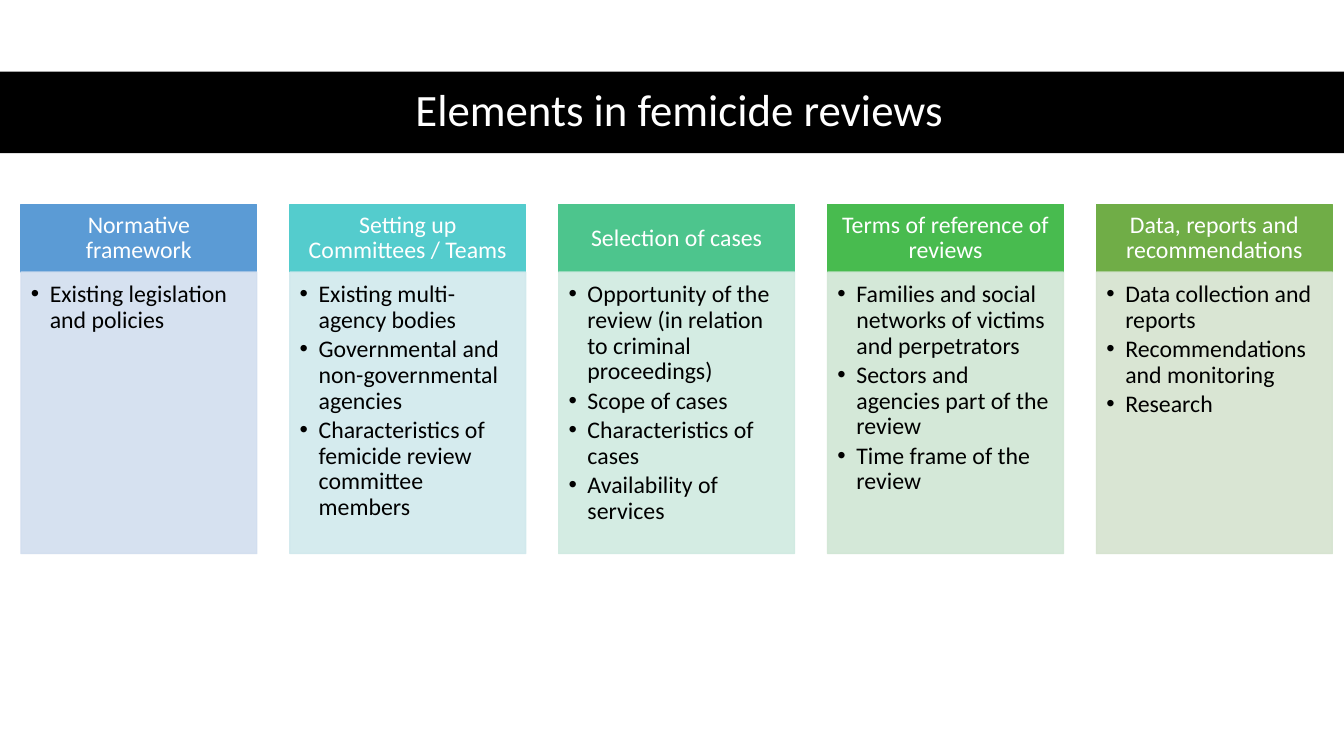
from lxml import etree
from pptx import Presentation
from pptx import util as u
from pptx.dml.color import RGBColor
from pptx.enum import shapes, text
from pptx.oxml import ns

COLORS = {
    "black": "000000", "white": "FFFFFF",
    "blue": "5B9BD5", "pale blue": "D2DEEF",
    "teal": "54CCCD", "pale teal": "D1E9ED",
    "mint": "4DC58D", "pale mint": "D0EAE1",
    "green": "48BB4F", "pale green": "D0E6D4",
    "olive": "70AD47", "pale olive": "D5E3CF",
}

COLUMNS = [
    ("blue", "Normative framework", ["Existing legislation and policies"]),
    ("teal", "Setting up Committees / Teams", [
        "Existing multi-agency bodies",
        "Governmental and non-governmental agencies",
        "Characteristics of femicide review committee members"]),
    ("mint", "Selection of cases", [
        "Opportunity of the review (in relation to criminal proceedings)",
        "Scope of cases",
        "Characteristics of cases",
        "Availability of services"]),
    ("green", "Terms of reference of reviews", [
        "Families and social networks of victims and perpetrators",
        "Sectors and agencies part of the review",
        "Time frame of the review"]),
    ("olive", "Data, reports and recommendations", [
        "Data collection and reports",
        "Recommendations and monitoring",
        "Research"]),
]

COLUMN_LEFT, COLUMN_WIDTH, COLUMN_PITCH = 15, 168.5, 192.05
HEADER_TOP, HEADER_HEIGHT, BODY_HEIGHT = 146.2, 48.2, 201


def write_text(frame, lines, size=17, color="black", align="LEFT", anchor="TOP",
               insets=(7.2, 3.6, 7.2, 3.6), bullet_indent=0, space_after=0):
    frame.word_wrap = True
    frame.vertical_anchor = text.MSO_ANCHOR[anchor]
    (frame.margin_left, frame.margin_top,
     frame.margin_right, frame.margin_bottom) = map(u.Pt, insets)
    for index, line in enumerate(lines):
        paragraph = frame.paragraphs[0] if index == 0 else frame.add_paragraph()
        paragraph.alignment = text.PP_ALIGN[align]
        paragraph.line_spacing = 0.9
        paragraph.space_after = u.Pt(space_after)
        run = paragraph.add_run()
        run.text = line
        run.font.name = "Calibri"
        run.font.size = u.Pt(size)
        run.font.color.rgb = RGBColor.from_string(COLORS[color])
        if bullet_indent:
            properties = paragraph._p.get_or_add_pPr()
            properties.set("marL", str(u.Pt(bullet_indent)))
            properties.set("indent", str(-u.Pt(bullet_indent)))
            etree.SubElement(properties, ns.qn("a:buFont"), typeface="Arial")
            etree.SubElement(properties, ns.qn("a:buChar"), char="•")


class SlideBuilder:
    """Draw styled elements on one blank slide."""

    def __init__(self, presentation):
        self.slide = presentation.slides.add_slide(presentation.slide_layouts[6])

    def rectangle(self, left, top, width, height, color, outlined=True, opacity=100):
        shape = self.slide.shapes.add_shape(
            shapes.MSO_SHAPE.RECTANGLE, *map(u.Pt, (left, top, width, height)))
        shape.shadow.inherit = False
        fills = [shape.fill]
        if outlined:
            shape.line.width = u.Pt(1)
            fills.append(shape.line.fill)
        else:
            shape.line.fill.background()
        for fill in fills:
            fill.solid()
            fill.fore_color.rgb = RGBColor.from_string(COLORS[color])
        if opacity < 100:
            for color_node in shape._element.spPr.iter(ns.qn("a:srgbClr")):
                etree.SubElement(color_node, ns.qn("a:alpha"), val=str(opacity * 1000))
        return shape

    def title(self, line):
        self.rectangle(0, 51.2, 960, 58.2, "black", outlined=False)
        box = self.slide.shapes.add_textbox(*map(u.Pt, (44, 50.6, 882.5, 58.2)))
        write_text(box.text_frame, [line], size=32, color="white",
                   align="CENTER", anchor="MIDDLE")

    def column(self, left, color, heading, points):
        header = self.rectangle(left, HEADER_TOP, COLUMN_WIDTH, HEADER_HEIGHT, color)
        write_text(header.text_frame, [heading], color="white", align="CENTER",
                   anchor="MIDDLE", insets=(9.5, 5.5, 9.5, 5.5))
        body = self.rectangle(left, HEADER_TOP + HEADER_HEIGHT, COLUMN_WIDTH,
                              BODY_HEIGHT, f"pale {color}", opacity=90)
        write_text(body.text_frame, points, insets=(7.2, 7.2, 9.5, 10.8),
                   bullet_indent=13.5, space_after=2.55)


def main():
    presentation = Presentation()
    presentation.slide_width, presentation.slide_height = u.Pt(960), u.Pt(540)
    builder = SlideBuilder(presentation)
    builder.title("Elements in femicide reviews")
    for index, column in enumerate(COLUMNS):
        builder.column(COLUMN_LEFT + index * COLUMN_PITCH, *column)
    presentation.save("out.pptx")


if __name__ == "__main__":
    main()
